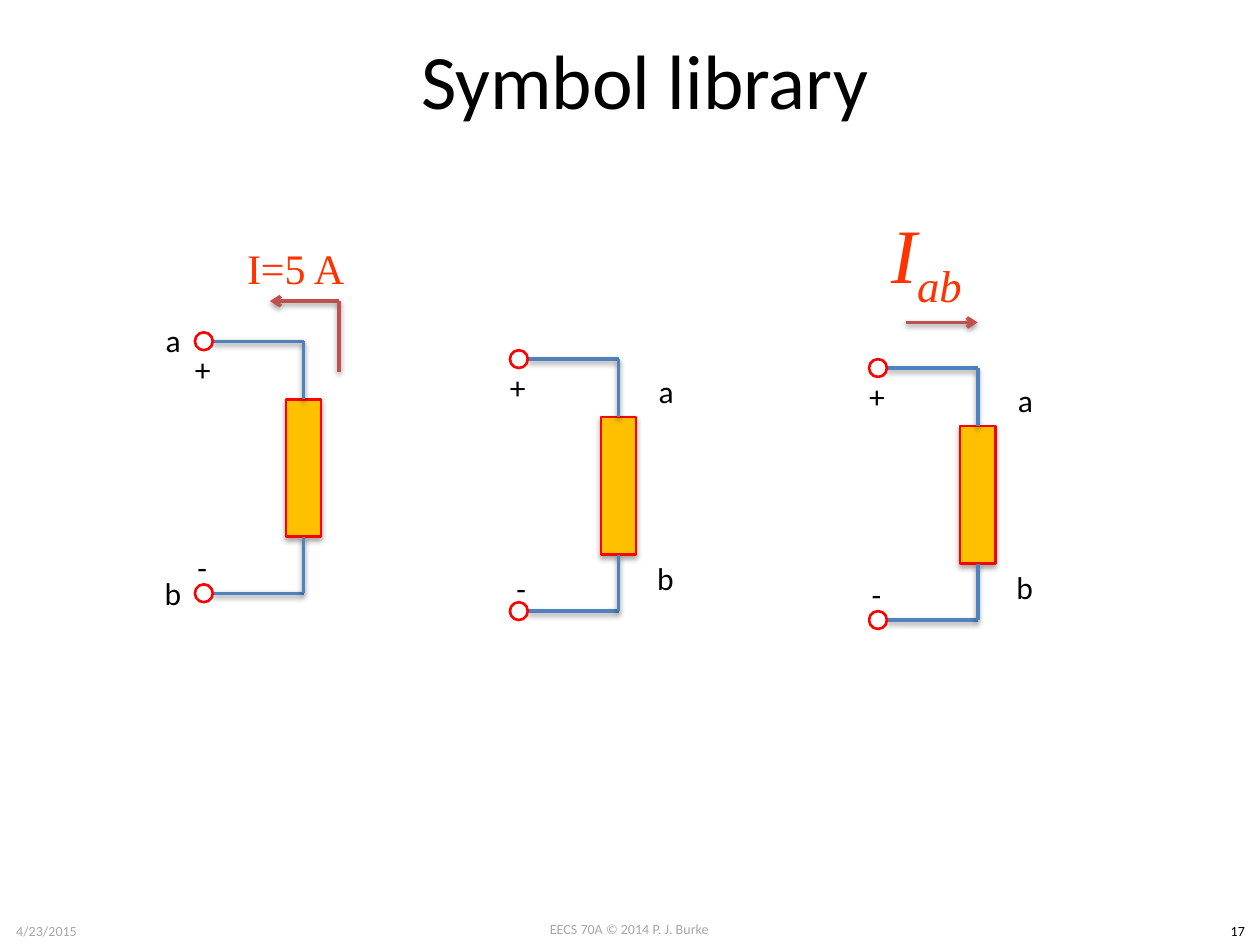
from dataclasses import dataclass

from lxml import etree
from pptx import Presentation
from pptx.dml.color import RGBColor
from pptx.enum.shapes import MSO_CONNECTOR, MSO_SHAPE
from pptx.enum.text import MSO_ANCHOR, MSO_AUTO_SIZE, PP_ALIGN
from pptx.oxml import parse_xml
from pptx.oxml.ns import nsdecls, qn
from pptx.util import Cm, Pt

STRAIGHT = MSO_CONNECTOR.STRAIGHT
RECT, OVAL = MSO_SHAPE.RECTANGLE, MSO_SHAPE.OVAL
MIDDLE, TOP_ANCHOR = MSO_ANCHOR.MIDDLE, MSO_ANCHOR.TOP
LEFT, CENTER = PP_ALIGN.LEFT, PP_ALIGN.CENTER
FIT_SHAPE = MSO_AUTO_SIZE.SHAPE_TO_FIT_TEXT
TOP_SITE, BOTTOM_SITE = 0, 2

# Circuit geometry in cm, measured from the centre of the upper terminal
SPAN = 5.08
LOAD_X, LOAD_TOP = 2.01, 1.17
LOAD_W, LOAD_H = 0.71, 2.77
RADIUS = 0.18
LABEL_WIDTHS = {"a": 0.81, "b": 0.86, "+": 0.84, "-": 0.71}


@dataclass
class Theme:
    sans: str = "Calibri"
    serif: str = "Times New Roman"
    text: str = "000000"
    footer: str = "A6A6A6"
    current: str = "FF3300"
    arrow: str = "C0504D"
    wire: str = "4F81BD"
    load: str = "FFC000"
    outline: str = "FF0000"
    title_size: int = 44
    current_size: int = 24
    label_size: int = 18
    footer_size: int = 8
    line_width: float = 2
    outline_width: float = 1.5


class SlideBuilder:
    def __init__(self, slide, theme):
        self.s = slide
        self.theme = theme

    def style_font(self, font, name, size, color):
        font.name = name
        font.size = Pt(size)
        font.color.rgb = RGBColor.from_string(color)

    def shadow(self, shape, alpha, distance):
        """Add a soft drop shadow; call it after fill and line are set."""
        shape._element.spPr.append(parse_xml(
            f'<a:effectLst {nsdecls("a")}>'
            f'<a:outerShdw blurRad="{Pt(3.1)}" dist="{Pt(distance)}" dir="5400000" rotWithShape="0">'
            f'<a:srgbClr val="000000"><a:alpha val="{alpha * 1000}"/></a:srgbClr>'
            '</a:outerShdw></a:effectLst>'))

    def title(self, text, x, y, w, h):
        sp = self.s.shapes.title
        sp.left, sp.top, sp.width, sp.height = Cm(x), Cm(y), Cm(w), Cm(h)
        tf = sp.text_frame
        tf.text = text
        tf.vertical_anchor = MIDDLE
        p = tf.paragraphs[0]
        p.alignment = CENTER
        self.style_font(p.font, self.theme.sans, self.theme.title_size, self.theme.text)

    def text(self, parent, text, box, name, size, color, align=CENTER, anchor=TOP_ANCHOR, wrap=True):
        """Add a text box and return its paragraph."""
        tf = parent.shapes.add_textbox(*(Cm(v) for v in box)).text_frame
        tf.word_wrap = wrap
        tf.vertical_anchor = anchor
        if anchor == TOP_ANCHOR:
            tf.auto_size = FIT_SHAPE
        p = tf.paragraphs[0]
        p.add_run().text = text
        p.alignment = align
        self.style_font(p.font, name, size, color)
        return p

    def footer(self, text, box, color):
        self.text(self.s, text, box, self.theme.sans, self.theme.footer_size, color)

    def label(self, group, text, x, y):
        t = self.theme
        self.text(group, text, (x, y, LABEL_WIDTHS[text], 1.02), t.sans, t.label_size,
                  t.text, align=LEFT, wrap=False)

    def current(self, group, text, box, size):
        return self.text(group, text, box, self.theme.serif, size, self.theme.current, anchor=MIDDLE)

    def line(self, group, start, end, color, arrow=False):
        c = group.shapes.add_connector(STRAIGHT, *(Cm(v) for v in (*start, *end)))
        c.line.color.rgb = RGBColor.from_string(color)
        c.line.width = Pt(self.theme.line_width)
        if arrow:
            etree.SubElement(c.line._get_or_add_ln(), qn("a:tailEnd"), type="arrow")
        self.shadow(c, 38, 1.6)
        return c

    def shape(self, group, kind, x, y, w, h):
        sp = group.shapes.add_shape(kind, Cm(x), Cm(y), Cm(w), Cm(h))
        sp.line.color.rgb = RGBColor.from_string(self.theme.outline)
        sp.line.width = Pt(self.theme.outline_width)
        return sp

    def terminal(self, group, x, y):
        sp = self.shape(group, OVAL, x - RADIUS, y - RADIUS, 2 * RADIUS, 2 * RADIUS)
        sp.fill.background()
        sp.shadow.inherit = False

    def load(self, group, x, y):
        sp = self.shape(group, RECT, x - LOAD_W / 2, y, LOAD_W, LOAD_H)
        sp.fill.solid()
        sp.fill.fore_color.rgb = RGBColor.from_string(self.theme.load)
        self.shadow(sp, 35, 1.8)
        return sp

    def circuit(self, x, y, labels):
        """Draw a load between two terminals; labels are (text, dx, dy)."""
        group = self.s.shapes.add_group_shape()
        load_x, load_y = x + LOAD_X, y + LOAD_TOP
        load = self.load(group, load_x, load_y)
        for end_y, load_end, site in ((y, load_y, TOP_SITE),
                                      (y + SPAN, load_y + LOAD_H, BOTTOM_SITE)):
            corner = (load_x, end_y)
            self.line(group, (x + RADIUS, end_y), corner, self.theme.wire)
            lead = self.line(group, corner, (load_x, load_end), self.theme.wire)
            lead.end_connect(load, site)
            self.terminal(group, x, end_y)
        for text, dx, dy in (("+", -0.43, 0.05), *labels):
            self.label(group, text, x + dx, y + dy)
        return group


def main():
    prs = Presentation()
    prs.slide_width, prs.slide_height = Cm(25.4), Cm(19.05)
    theme = Theme()
    b = SlideBuilder(prs.slides.add_slide(prs.slide_layouts[5]), theme)

    b.title("Symbol library", 1.57, 0, 22.86, 3.18)
    b.footer("EECS 70A © 2014 P. J. Burke", (9.73, 18.44, 5.92, 0.61), theme.footer)
    b.footer("4/23/2015", (0, 18.47, 1.88, 0.61), theme.footer)
    b.footer("17", (24.51, 18.47, 0.89, 0.61), theme.text)

    nodes_right = (("a", 2.57, 0.13), ("b", 2.54, 3.91))
    nodes_left = (("a", -1.02, -0.53), ("b", -1.04, 4.57))

    b.circuit(10.46, 7.24, (*nodes_right, ("-", -0.3, 4.11)))

    right = b.circuit(17.7, 7.42, (*nodes_right, ("-", -0.38, 4.04)))
    b.line(right, (18.26, 6.5), (19.71, 6.5), theme.arrow, arrow=True)
    p = b.current(right, "I", (17.09, 3.94, 3.18, 2.57), theme.title_size)
    p.font.italic = True
    r = p.add_run()
    r.text = "ab"
    r._r.get_or_add_rPr().set("baseline", "-25000")

    left = b.circuit(4.11, 6.88, (*nodes_left, ("-", -0.38, 4.04)))
    bend = (6.83, 6.07)
    b.line(left, bend, (5.44, 6.07), theme.arrow, arrow=True)
    b.line(left, (6.83, 7.49), bend, theme.arrow)
    b.current(left, "I=5 A", (4.45, 4.47, 3.02, 1.85), theme.current_size)

    prs.save("out.pptx")


if __name__ == "__main__":
    main()
